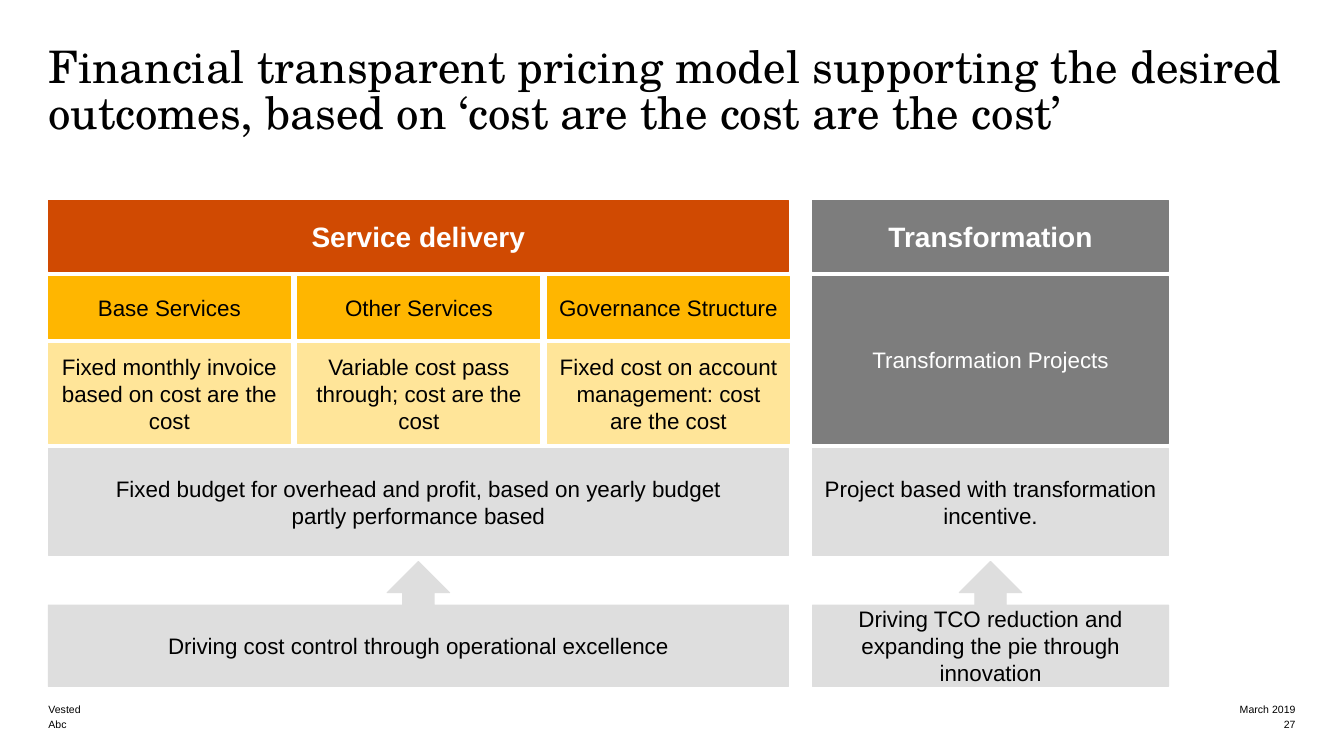
from dataclasses import dataclass

from pptx import Presentation
from pptx import util as u
from pptx.dml import color
from pptx.enum import shapes, text

COLORS = {
    "orange": "D04A02",
    "amber": "FFB600",
    "cream": "FFE599",
    "gray": "7D7D7D",
    "light": "DEDEDE",
    "black": "000000",
    "white": "FFFFFF",
}
LEFT = 0.48
SERVICE_WIDTH = 7.34
PROJECT_LEFT, PROJECT_WIDTH = 8.06, 3.53
COLUMN_WIDTH, COLUMN_PITCH = 2.4, 2.475
HEADER = (1.99, 0.7)
NAMES = (2.74, 0.62)
COSTS = (3.41, 0.99)
PROJECTS = (2.74, 1.66)
BUDGET = (4.45, 1.06)
DRIVERS = (5.57, 1.24)
RECTANGLE = shapes.MSO_SHAPE.RECTANGLE
CALLOUT = shapes.MSO_SHAPE.UP_ARROW_CALLOUT


@dataclass
class Block:
    words: str
    left: float
    width: float
    row: tuple[float, float]
    fill: str
    ink: str = "black"
    size: float = 16
    bold: bool = False
    kind: shapes.MSO_SHAPE = RECTANGLE


@dataclass
class Label:
    words: str
    left: float
    top: float
    width: float
    height: float
    size: float = 7.5
    font: str = "Arial"
    align: text.PP_ALIGN = text.PP_ALIGN.LEFT
    anchor: text.MSO_ANCHOR = text.MSO_ANCHOR.BOTTOM
    spacing: float = 1.0


SERVICES = [
    ("Base Services", "Fixed monthly invoice based on cost are the cost"),
    ("Other Services", "Variable cost pass through; cost are the cost"),
    ("Governance Structure", "Fixed cost on account management: cost are the cost"),
]

BLOCKS = [
    Block("Service delivery", LEFT, SERVICE_WIDTH, HEADER, "orange", "white", 20, True),
    Block("Fixed budget for overhead and profit, based on yearly budget\n"
          "partly performance based", LEFT, SERVICE_WIDTH, BUDGET, "light"),
    Block("Transformation", PROJECT_LEFT, PROJECT_WIDTH, HEADER, "gray", "white", 20, True),
    Block("Transformation Projects", PROJECT_LEFT, PROJECT_WIDTH, PROJECTS, "gray", "white"),
    Block("Project based with transformation incentive.",
          PROJECT_LEFT, PROJECT_WIDTH, BUDGET, "light"),
    Block("Driving cost control through operational excellence",
          LEFT, SERVICE_WIDTH, DRIVERS, "light", kind=CALLOUT),
    Block("Driving TCO reduction and expanding the pie through innovation",
          PROJECT_LEFT, PROJECT_WIDTH, DRIVERS, "light", kind=CALLOUT),
]
for index, (name, cost) in enumerate(SERVICES):
    column_left = LEFT + index * COLUMN_PITCH
    BLOCKS.append(Block(name, column_left, COLUMN_WIDTH, NAMES, "amber"))
    BLOCKS.append(Block(cost, column_left, COLUMN_WIDTH, COSTS, "cream"))

LABELS = [
    Label("Financial transparent pricing model supporting the desired outcomes, "
          "based on ‘cost are the cost are the cost’", LEFT, 0.47, 12.36, 1.52, 32,
          "TeX Gyre Schola", anchor=text.MSO_ANCHOR.TOP, spacing=0.85),
    Label("Vested", LEFT, 6.95, 5.99, 0.15),
    Label("Abc", LEFT, 7.1, 5.99, 0.15),
    Label("March 2019", 8.99, 6.95, 3.86, 0.15, align=text.PP_ALIGN.RIGHT),
    Label("27", 8.99, 7.1, 3.86, 0.15, align=text.PP_ALIGN.RIGHT),
]


def rgb(name: str) -> color.RGBColor:
    return color.RGBColor.from_string(COLORS[name])


def write(box, words: str, size: float, ink: str, align: text.PP_ALIGN,
          anchor: text.MSO_ANCHOR, inset: float, font: str = "Arial",
          bold: bool = False, spacing: float = 1.0) -> None:
    frame = box.text_frame
    frame.text = words
    frame.word_wrap = True
    frame.vertical_anchor = anchor
    frame.margin_left = frame.margin_right = u.Inches(inset)
    frame.margin_top = frame.margin_bottom = u.Inches(inset)
    for para in frame.paragraphs:
        para.alignment = align
        para.line_spacing = spacing
        for span in para.runs:
            span.font.name = font
            span.font.size = u.Pt(size)
            span.font.bold = bold
            span.font.color.rgb = rgb(ink)


def draw_block(page, block: Block) -> None:
    top, height = block.row
    box = page.shapes.add_shape(block.kind, u.Inches(block.left), u.Inches(top),
                                u.Inches(block.width), u.Inches(height))
    box.shadow.inherit = False
    box.fill.solid()
    box.fill.fore_color.rgb = rgb(block.fill)
    box.line.color.rgb = rgb(block.fill)
    box.line.width = u.Pt(0.75)
    if block.kind == CALLOUT:
        for index, value in enumerate((0.25, 0.25, 0.25, 0.65)):
            box.adjustments[index] = value
    write(box, block.words, block.size, block.ink, text.PP_ALIGN.CENTER,
          text.MSO_ANCHOR.MIDDLE, 0.1, bold=block.bold)


def draw_label(page, label: Label) -> None:
    box = page.shapes.add_textbox(u.Inches(label.left), u.Inches(label.top),
                                  u.Inches(label.width), u.Inches(label.height))
    write(box, label.words, label.size, "black", label.align, label.anchor, 0,
          label.font, spacing=label.spacing)


def main() -> None:
    deck = Presentation()
    deck.slide_width, deck.slide_height = u.Inches(13.33), u.Inches(7.5)
    page = deck.slides.add_slide(deck.slide_layouts[6])
    for label in LABELS:
        draw_label(page, label)
    for block in BLOCKS:
        draw_block(page, block)
    deck.save("out.pptx")


if __name__ == "__main__":
    main()
